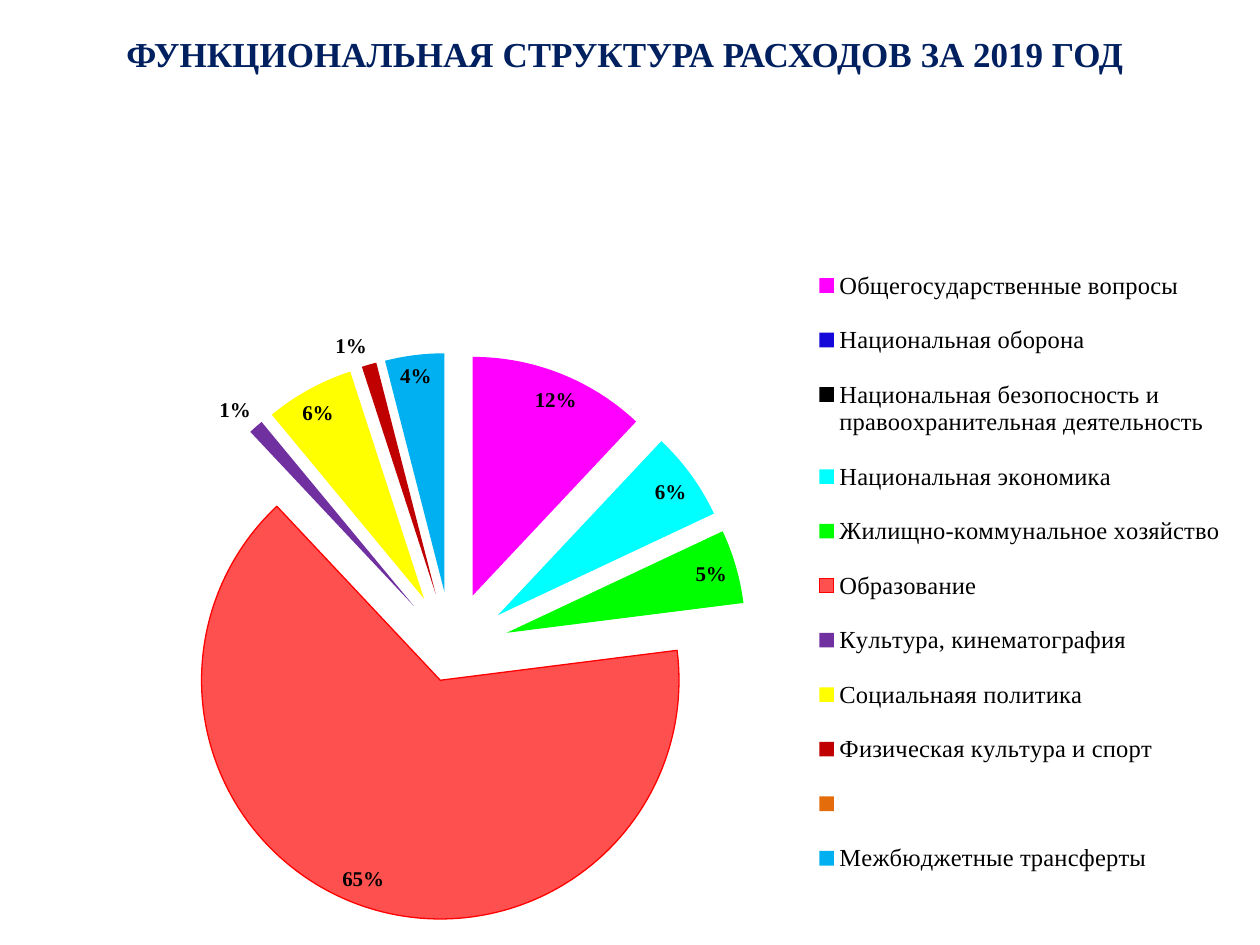
from lxml import etree
from pptx import Presentation
from pptx import util as u
from pptx.chart import data as chart_data
from pptx.dml.color import RGBColor
from pptx.enum import chart as charts, text
from pptx.oxml import ns

SERIF = "Times New Roman"
EXPENSES = [
    ("Общегосударственные вопросы", 12, "FF00FF"),
    ("Национальная оборона", 0, "1708DA"),
    ("Национальная безопосность и правоохранительная деятельность", 0, "000000"),
    ("Национальная экономика", 6, "00FFFF"),
    ("Жилищно-коммунальное хозяйство", 5, "00FF00"),
    ("Образование", 65, "FF5050"),
    ("Культура, кинематография", 1, "7030A0"),
    ("Социальнаяя политика", 6, "FFFF00"),
    ("Физическая культура и спорт", 1, "C00000"),
    ("", None, "E46C0A"),
    ("Межбюджетные трансферты", 4, "00B0F0"),
]
EDUCATION = 5


def color(hex_value):
    return RGBColor.from_string(hex_value)


def format_font(font, size=12, name=SERIF, fill="000000", bold=False):
    font.size, font.name, font.bold = u.Pt(size), name, bold
    font.color.rgb = color(fill)


def write(paragraph, words, align=text.PP_ALIGN.LEFT, **style):
    paragraph.alignment = align
    run = paragraph.add_run()
    run.text = words
    format_font(run.font, **style)


def chart_element(tag, value=None):
    element = etree.Element(ns.qn("c:" + tag))
    if value is not None:
        element.set("val", str(value))
    return element


def manual_layout(x, y, w, h, inner=False):
    layout = chart_element("layout")
    manual = etree.SubElement(layout, ns.qn("c:manualLayout"))
    if inner:
        manual.append(chart_element("layoutTarget", "inner"))
    for tag in ("xMode", "yMode"):
        manual.append(chart_element(tag, "edge"))
    for tag, value in zip("xywh", (x, y, w, h)):
        manual.append(chart_element(tag, value))
    return layout


class Deck:
    def __init__(self, width, height):
        self.file = Presentation()
        self.file.slide_width, self.file.slide_height = u.Inches(width), u.Inches(height)
        self.slide = self.file.slides.add_slide(self.file.slide_layouts[6])

    def title(self, words, *box):
        frame = self.slide.shapes.add_textbox(*map(u.Inches, box)).text_frame
        frame.word_wrap = True
        frame.auto_size = text.MSO_AUTO_SIZE.SHAPE_TO_FIT_TEXT
        write(frame.paragraphs[0], words, align=text.PP_ALIGN.CENTER,
              size=20, fill="002060", bold=True)

    def pie(self, rows, *box):
        shares = chart_data.CategoryChartData()
        shares.categories = [name for name, _, _ in rows]
        shares.add_series("Series 1", [value for _, value, _ in rows])
        pie = self.slide.shapes.add_chart(
            charts.XL_CHART_TYPE.PIE, *map(u.Inches, box), shares).chart
        pie.has_title = False
        format_font(pie.font, size=10, name="Arial")
        pie.plots[0].vary_by_categories = True
        self.slices(pie.plots[0].series[0], rows)
        self.legend(pie)

        # Plot area position
        area = pie.plots[0]._element.getparent()
        for old in area.findall(ns.qn("c:layout")):
            area.remove(old)
        area.insert(0, manual_layout(0.075, 0.222, 0.572, 0.778, inner=True))

    def slices(self, series, rows):
        for index, (_, _, fill) in enumerate(rows):
            look = series.points[index].format
            look.fill.solid()
            look.fill.fore_color.rgb = color(fill)
        border = series.points[EDUCATION].format.line
        border.color.rgb = color("FF0000")
        border.width = u.Pt(0.75)

        # Explosion: one for the series, a smaller one for education
        series._element.find(ns.qn("c:tx")).addnext(chart_element("explosion", 24))
        education = series._element.findall(ns.qn("c:dPt"))[EDUCATION]
        education.find(ns.qn("c:spPr")).addprevious(chart_element("explosion", 14))

        labels = series.data_labels
        labels.show_percentage, labels.show_value = True, False
        labels.number_format, labels.number_format_is_linked = "0%", False
        labels.position = charts.XL_LABEL_POSITION.BEST_FIT
        format_font(labels.font, bold=True)

    def legend(self, pie):
        pie.has_legend = True
        legend = pie.legend
        legend.position = charts.XL_LEGEND_POSITION.RIGHT
        legend.include_in_layout = True
        format_font(legend.font, size=14)
        for old in legend._element.findall(ns.qn("c:layout")):
            legend._element.remove(old)
        legend._element.find(ns.qn("c:legendPos")).addnext(
            manual_layout(0.64, 0.08, 0.35, 0.86))


def main():
    deck = Deck(10, 7.5)
    deck.title("ФУНКЦИОНАЛЬНАЯ СТРУКТУРА РАСХОДОВ ЗА 2019 ГОД", 0.51, 0.21, 8.9, 0.43)
    deck.pie(EXPENSES, 0, 1.46, 9.93, 6.04)
    deck.file.save("out.pptx")


if __name__ == "__main__":
    main()
